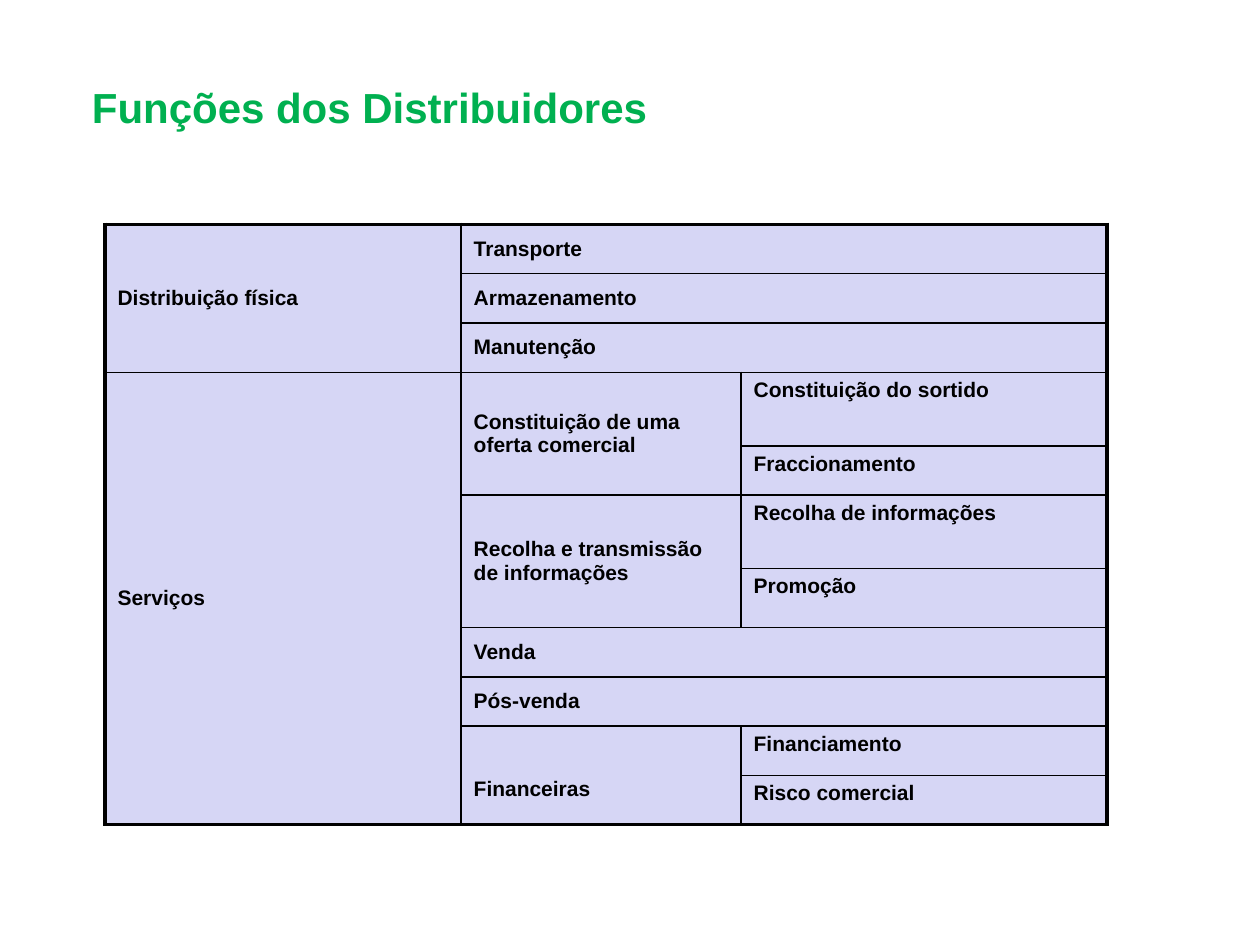
from lxml import etree
from pptx import Presentation
from pptx.dml.color import RGBColor
from pptx.enum.text import MSO_ANCHOR, PP_ALIGN
from pptx.oxml.ns import qn
from pptx.util import Pt

TOP, MIDDLE = MSO_ANCHOR.TOP, MSO_ANCHOR.MIDDLE
LEFT = PP_ALIGN.LEFT

TITLE = "Funções dos Distribuidores"
COLUMN_WIDTHS = [203.5, 160, 209]
ROW_HEIGHTS = [28.2, 28.2, 28.2, 42, 28.2, 42, 33.7, 28.2, 28.2, 28.2, 28.2]
TABLE_LEFT, TABLE_TOP = 60, 128.2
CELLS = [
    (0, 0, 3, 1, "Distribuição física"),
    (0, 1, 1, 2, "Transporte"),
    (1, 1, 1, 2, "Armazenamento"),
    (2, 1, 1, 2, "Manutenção"),
    (3, 0, 8, 1, "Serviços"),
    (3, 1, 2, 1, "Constituição de uma oferta comercial"),
    (3, 2, 1, 1, "Constituição do sortido"),
    (4, 2, 1, 1, "Fraccionamento"),
    (5, 1, 2, 1, "Recolha e transmissão de informações"),
    (5, 2, 1, 1, "Recolha de informações"),
    (6, 2, 1, 1, "Promoção"),
    (7, 1, 1, 2, "Venda"),
    (8, 1, 1, 2, "Pós-venda"),
    (9, 1, 2, 1, "Financeiras"),
    (9, 2, 1, 1, "Financiamento"),
    (10, 2, 1, 1, "Risco comercial"),
]
LOWERED = {"Financeiras": 16.2}


def color(value):
    return RGBColor.from_string(value)


def write(frame, text, size, fill, space_before):
    frame.word_wrap = True
    paragraph = frame.paragraphs[0]
    paragraph.alignment = LEFT
    paragraph.space_before = Pt(space_before)
    run = paragraph.add_run()
    run.text = text
    run.font.name = "Arial"
    run.font.size = Pt(size)
    run.font.bold = True
    run.font.color.rgb = color(fill)


def set_borders(cell, widths):
    properties = cell._tc.get_or_add_tcPr()
    for index, (side, width) in enumerate(widths.items()):
        line = etree.Element(qn(f"a:ln{side}"), w=str(Pt(width)))
        fill = etree.SubElement(line, qn("a:solidFill"))
        etree.SubElement(fill, qn("a:srgbClr"), val="000000")
        properties.insert(index, line)


def add_title(slide):
    title = slide.shapes.title
    title.left, title.top, title.width, title.height = Pt(36.7), Pt(43.2), Pt(653), Pt(39.6)
    frame = title.text_frame
    frame.margin_left, frame.margin_right = Pt(15.8), Pt(7.2)
    frame.margin_top = frame.margin_bottom = Pt(3.6)
    frame.vertical_anchor = TOP
    write(frame, TITLE, size=24, fill="00B050", space_before=3)


def fill_area(table, row, column, row_span, column_span, text):
    last_row, last_column = row + row_span - 1, column + column_span - 1
    origin = table.cell(row, column)
    if row_span * column_span > 1:
        origin.merge(table.cell(last_row, last_column))
    outer = {
        "L": column == 0,
        "R": last_column == len(COLUMN_WIDTHS) - 1,
        "T": row == 0,
        "B": last_row == len(ROW_HEIGHTS) - 1,
    }
    widths = {side: 2.25 if edge else 1 for side, edge in outer.items()}
    for y in range(row, last_row + 1):
        for x in range(column, last_column + 1):
            cell = table.cell(y, x)
            cell.fill.solid()
            cell.fill.fore_color.rgb = color("D6D6F5")
            on_edge = {"L": x == column, "R": x == last_column,
                       "T": y == row, "B": y == last_row}
            is_origin = (y, x) == (row, column)
            set_borders(cell, {side: width for side, width in widths.items()
                               if is_origin or on_edge[side]})
    origin.margin_left = origin.margin_right = Pt(7.2)
    origin.margin_top = Pt(3.6 + LOWERED.get(text, 0))
    origin.margin_bottom = Pt(3.6)
    origin.vertical_anchor = TOP if column == 2 else MIDDLE
    write(origin.text_frame, text, size=12, fill="000000", space_before=2.4)


def add_functions_table(slide):
    frame = slide.shapes.add_table(
        len(ROW_HEIGHTS), len(COLUMN_WIDTHS), Pt(TABLE_LEFT), Pt(TABLE_TOP),
        Pt(sum(COLUMN_WIDTHS)), Pt(sum(ROW_HEIGHTS)))
    table = frame.table
    table.first_row = table.horz_banding = False
    for column, width in zip(table.columns, COLUMN_WIDTHS):
        column.width = Pt(width)
    for row, height in zip(table.rows, ROW_HEIGHTS):
        row.height = Pt(height)
    for area in CELLS:
        fill_area(table, *area)


def main():
    presentation = Presentation()
    presentation.slide_width, presentation.slide_height = Pt(720), Pt(540)
    slide = presentation.slides.add_slide(presentation.slide_layouts[5])
    add_title(slide)
    add_functions_table(slide)
    presentation.save("out.pptx")


if __name__ == "__main__":
    main()
